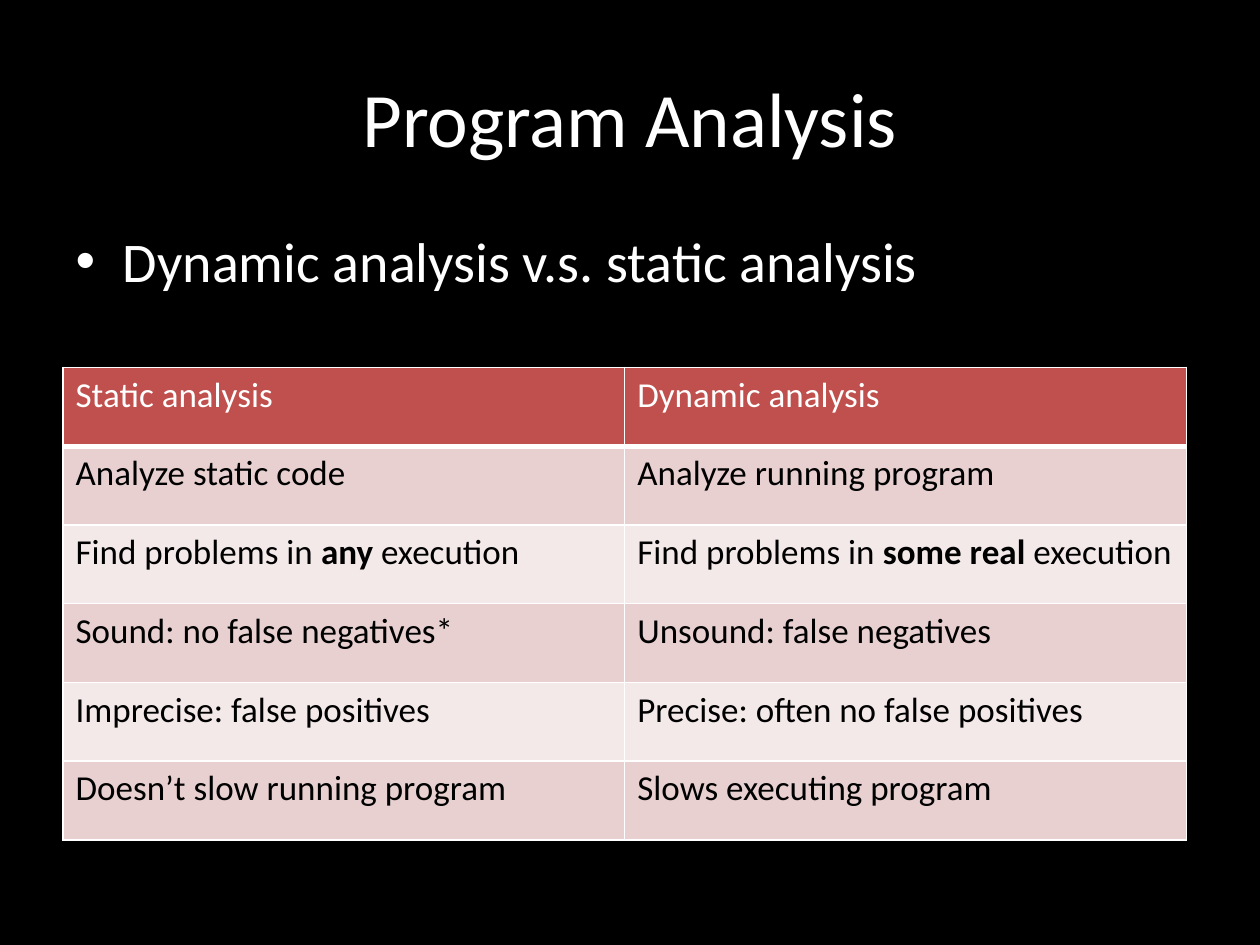
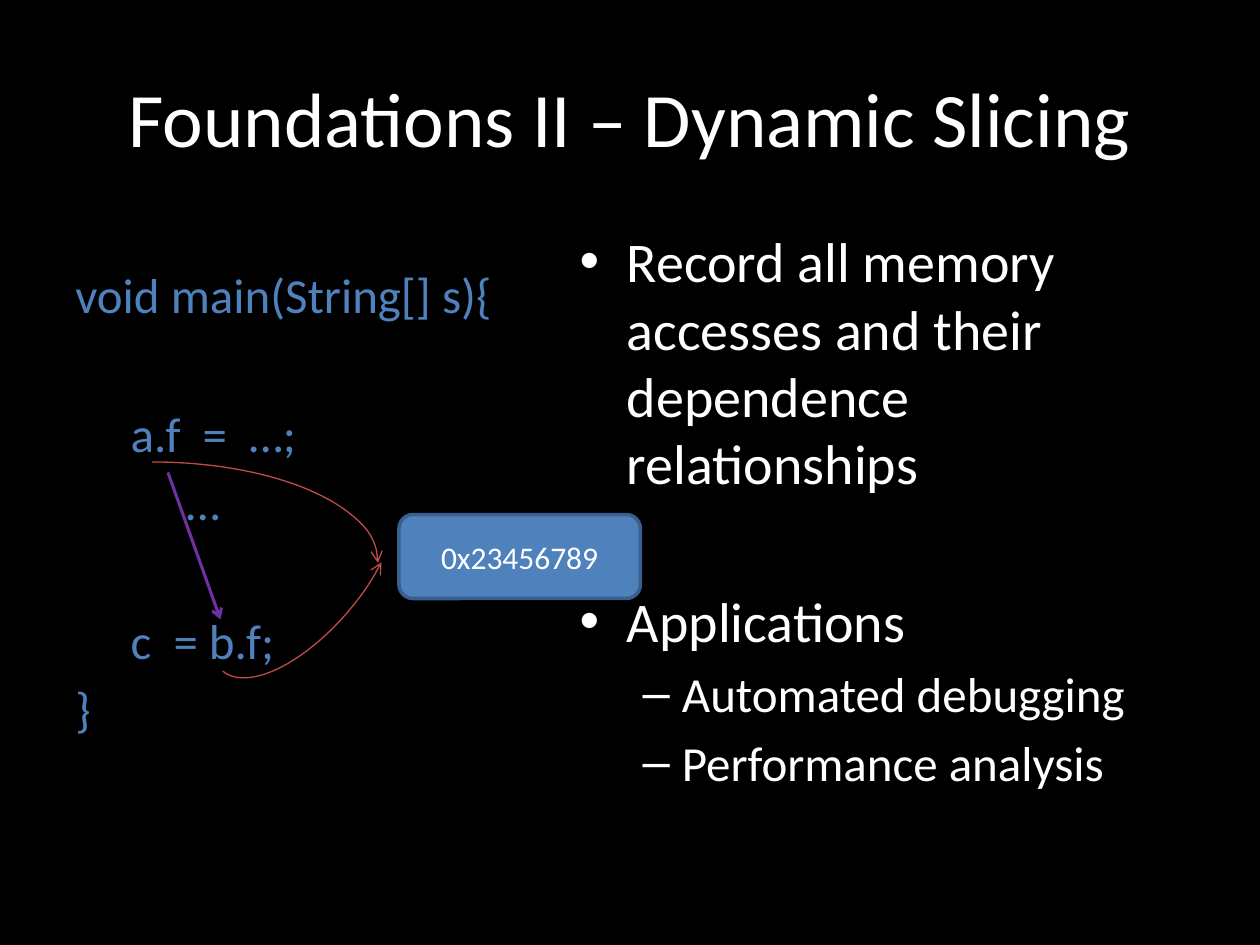
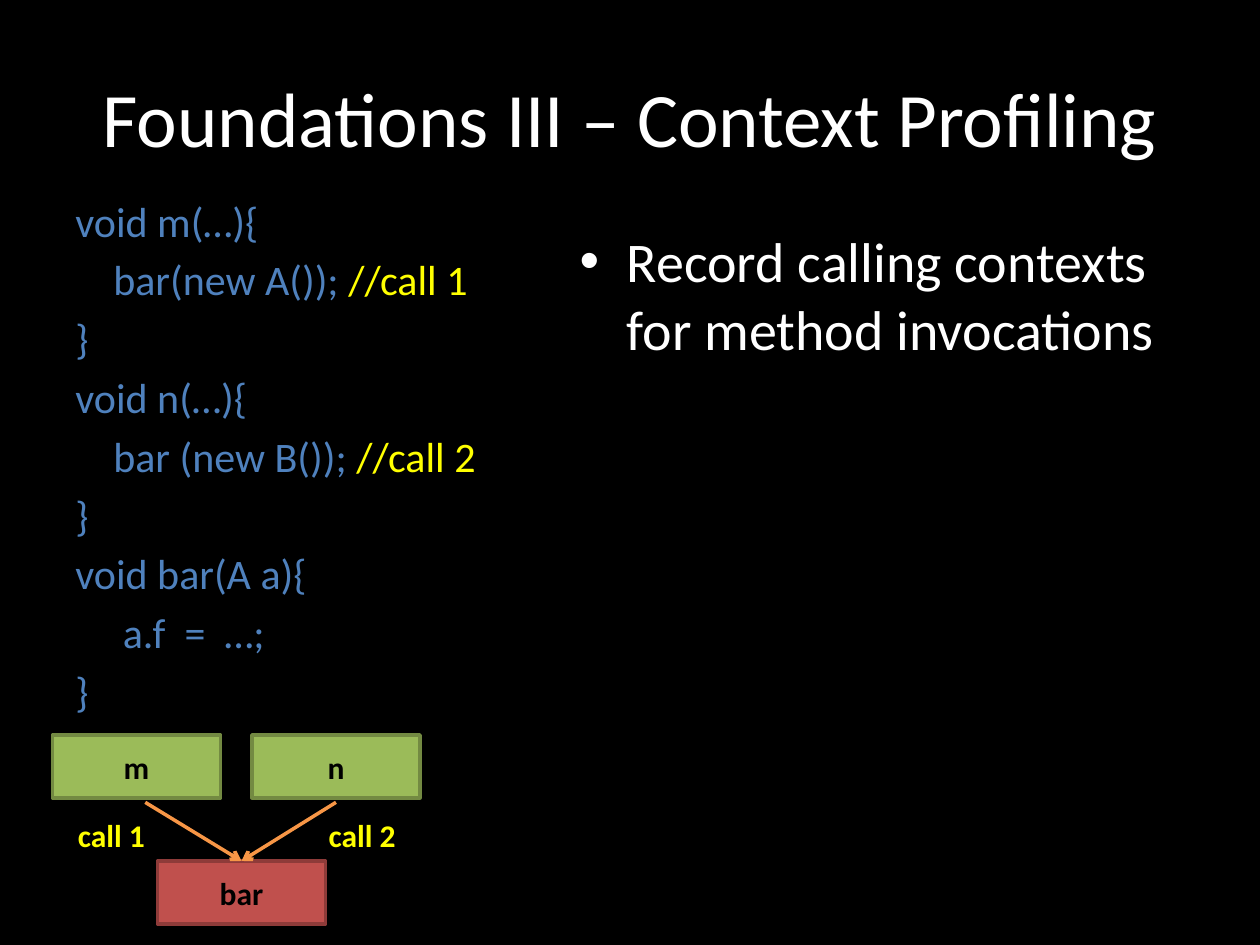
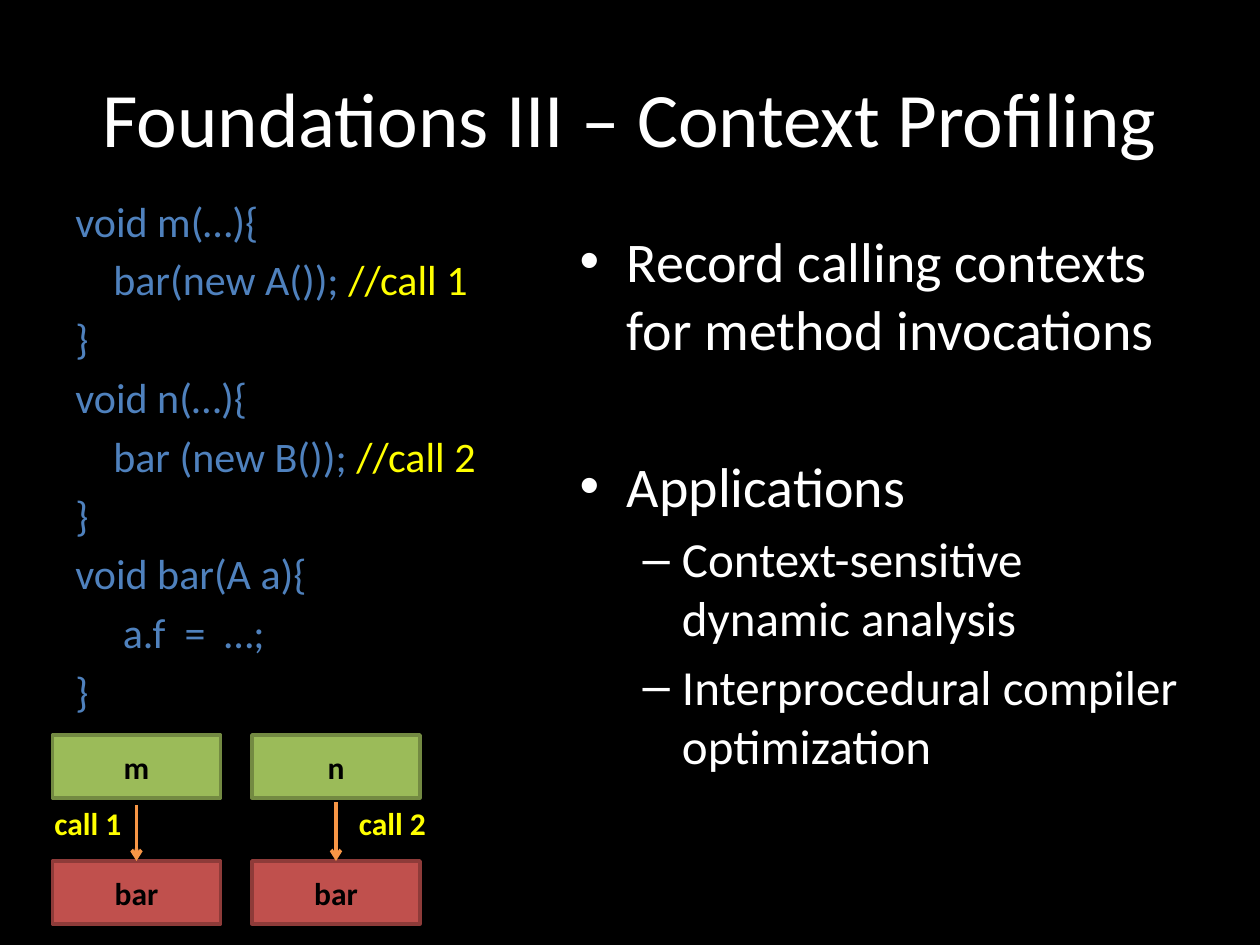
import pptx
import pptx.dml.color
import pptx.enum.shapes
import pptx.enum.text
import pptx.oxml
import pptx.oxml.ns
import pptx.util

Pt = pptx.util.Pt
Shapes = pptx.enum.shapes.MSO_SHAPE
Align = pptx.enum.text.PP_ALIGN
Anchor = pptx.enum.text.MSO_ANCHOR


class Theme:
    font = "Calibri"
    background, text, dark_text = "000000", "FFFFFF", "000000"
    blue, blue_edge = "4F81BD", "3A5F8C"
    green, green_edge = "9BBB59", "738A42"
    red, red_edge = "C0504D", "8E3B39"
    bands = ("E8D0D0", "F4E9E9")
    call, call_arrow = "FFFF00", "F79646"
    access_arc, dependence = "BF4C48", "7030A0"
    title_size, list_sizes = 44, (32, 28)
    table_size, label_size = 20, 18
    space_before, line_height, space_width = 0.2, 1.22, 0.226


# Content: list items are (text, level, gap before)
BOLD = {"bold": True}
CALL = {"color": Theme.call}
ANALYSIS_ITEMS = [("Dynamic analysis v.s. static analysis", 0, False)]
ANALYSIS_ROWS = [
    ("Static analysis", "Dynamic analysis"),
    ("Analyze static code", "Analyze running program"),
    ([("Find problems in ", {}), ("any", BOLD), (" execution", {})],
     [("Find problems in ", {}), ("some real ", BOLD), ("execution", {})]),
    ("Sound: no false negatives*", "Unsound: false negatives"),
    ("Imprecise: false positives", "Precise: often no false positives"),
    ("Doesn’t slow running program", "Slows executing program"),
]
SLICING_ITEMS = [
    ("Record all memory accesses and their dependence relationships", 0, False),
    ("Applications", 0, True),
    ("Automated debugging", 1, False),
    ("Performance analysis", 1, False),
]
PROFILING_ITEMS = [("Record calling contexts for method invocations", 0, False)]
PROFILING_APPLICATIONS = [
    ("Applications", 0, True),
    ("Context-sensitive dynamic analysis", 1, False),
    ("Interprocedural compiler optimization", 1, False),
]
# Code lines are (text, indent in characters, gap before)
SLICING_CODE = [
    ("void main(String[] s){", 0, True),
    ("a.f  =  …;", 5, True),
    ("…", 10, False),
    ("c  = b.f;", 5, True),
    ("}", 0, False),
]
PROFILING_CODE = [
    ("void m(…){", 0, False),
    ([("bar(new A()); ", {}), ("//call 1", CALL)], 4, False),
    ("}", 0, False),
    ("void n(…){", 0, False),
    ([("bar (new B()); ", {}), ("//call 2", CALL)], 4, False),
    ("}", 0, False),
    ("void bar(A a){", 0, False),
    ("a.f  =  …;", 5, False),
    ("}", 0, False),
]

# Geometry in points: left, top, width, height
TITLE_BOX = (36, 21.6, 648, 90)
WIDE_BODY = (36, 126, 648, 356.4)
RIGHT_BODY = (324, 126, 360, 356.4)
CODE_BOX = (36, 108, 288, 396)
TABLE_BOX = (36, 210, 642, 270)
NODE_SIZE = (96, 36)
LABEL_SIZE = (53.3, 28.8)
CALLER_TOP, CALLEE_TOP = 420, 492
M_LEFT, N_LEFT, SHARED_LEFT = 30, 144, 90


# Text helpers
def rgb(value):
    return pptx.dml.color.RGBColor.from_string(value)


def points(values):
    return [Pt(value) for value in values]


def write_text(paragraph, text, *, size, color=Theme.text, bold=False, align=None,
               level=0, indent=0, space_before=None):
    """Fill a paragraph from a string or a list of (text, overrides) parts."""
    if align is not None:
        paragraph.alignment = align
    if level:
        paragraph.level = level
    if indent:
        paragraph._p.get_or_add_pPr().set("marL", str(Pt(indent)))
    if space_before is not None:
        paragraph.space_before = Pt(space_before)
    for part, changes in [(text, {})] if isinstance(text, str) else text:
        run = paragraph.add_run()
        run.text = part
        run.font.name = Theme.font
        run.font.size = Pt(size)
        run.font.bold = changes.get("bold", bold)
        run.font.color.rgb = rgb(changes.get("color", color))


def next_paragraph(frame, index):
    return frame.add_paragraph() if index else frame.paragraphs[0]


def blank_gap(size):
    """Space before a paragraph that stands one empty line lower."""
    return round(size * (2 * Theme.space_before + Theme.line_height), 1)


# Slide parts
def place(shape, box):
    shape.left, shape.top, shape.width, shape.height = points(box)


def add_slide(presentation, title, items, body_box):
    slide = presentation.slides.add_slide(presentation.slide_layouts[1])
    heading, body = slide.shapes.title, slide.placeholders[1]
    place(heading, TITLE_BOX)
    place(body, body_box)
    write_text(heading.text_frame.paragraphs[0], title, size=Theme.title_size,
               align=Align.CENTER)
    body.text_frame.auto_size = pptx.enum.text.MSO_AUTO_SIZE.NONE
    for index, (text, level, gap) in enumerate(items):
        size = Theme.list_sizes[level]
        write_text(next_paragraph(body.text_frame, index), text, size=size, level=level,
                   space_before=blank_gap(size) if gap else None)
    return slide


def add_code(slide, lines, size):
    frame = slide.shapes.add_textbox(*points(CODE_BOX)).text_frame
    frame.word_wrap = True
    for index, (text, indent, gap) in enumerate(lines):
        before = blank_gap(size) if gap else size * Theme.space_before
        if index == 0:
            if gap:
                frame.margin_top = Pt(3.6 + before - size * Theme.space_before)
            before = 0
        write_text(next_paragraph(frame, index), text, size=size, color=Theme.blue,
                   indent=indent * size * Theme.space_width, space_before=before)


def set_line(shape, color, width, **ends):
    """Set the outline; ends maps headEnd or tailEnd to an arrow type."""
    shape.line.color.rgb = rgb(color)
    shape.line.width = Pt(width)
    properties = shape._element.spPr
    outline = properties.find(pptx.oxml.ns.qn("a:ln"))
    for end, kind in ends.items():
        outline.append(pptx.oxml.parse_xml(
            f'<a:{end} {pptx.oxml.ns.nsdecls("a")} type="{kind}"/>'))


def add_box(slide, kind, box, text, *, fill, edge, color, bold=False):
    shape = slide.shapes.add_shape(kind, *points(box))
    shape.shadow.inherit = False
    shape.fill.solid()
    shape.fill.fore_color.rgb = rgb(fill)
    set_line(shape, edge, 2)
    shape.text_frame.vertical_anchor = Anchor.MIDDLE
    write_text(shape.text_frame.paragraphs[0], text, size=Theme.label_size, color=color,
               bold=bold, align=Align.CENTER)
    return shape


def add_arc(slide, box, start, end, *, rotation=0, **ends):
    arc = slide.shapes.add_shape(Shapes.ARC, *points(box))
    arc.shadow.inherit = False
    arc.fill.background()
    arc.rotation = rotation
    arc.adjustments[0], arc.adjustments[1] = start, end
    set_line(arc, Theme.access_arc, 0.75, **ends)


def add_arrow(slide, start, end, color, width, target=None):
    arrow = slide.shapes.add_connector(pptx.enum.shapes.MSO_CONNECTOR.STRAIGHT,
                                       *points(start + end))
    if target is not None:
        arrow.end_connect(target, 0)
    set_line(arrow, color, width, tailEnd="arrow")
    arrow._element.spPr.append(pptx.oxml.parse_xml(
        f'<a:effectLst {pptx.oxml.ns.nsdecls("a")}/>'))


def set_borders(cell, widths):
    properties = cell._tc.get_or_add_tcPr()
    for side, width in zip("LRTB", widths):
        properties.append(pptx.oxml.parse_xml(
            f'<a:ln{side} {pptx.oxml.ns.nsdecls("a")} w="{Pt(width)}"><a:solidFill>'
            f'<a:srgbClr val="{Theme.text}"/></a:solidFill></a:ln{side}>'))


def add_analysis_table(slide):
    rows, columns = len(ANALYSIS_ROWS), len(ANALYSIS_ROWS[0])
    table = slide.shapes.add_table(rows, columns, *points(TABLE_BOX)).table
    table.first_row = table.horz_banding = False
    for row, texts in enumerate(ANALYSIS_ROWS):
        header = row == 0
        for column, text in enumerate(texts):
            cell = table.cell(row, column)
            set_borders(cell, (1, 1, 1, 3 if header else 1))
            cell.fill.solid()
            cell.fill.fore_color.rgb = rgb(Theme.red if header else Theme.bands[(row - 1) % 2])
            write_text(cell.text_frame.paragraphs[0], text, size=Theme.table_size,
                       color=Theme.text if header else Theme.dark_text)


def add_call_graph(slide, callee_lefts, calls, labels):
    """Draw m and n above their callees; calls are (start, callee index)."""
    def node(text, left, top, fill, edge):
        return add_box(slide, Shapes.RECTANGLE, (left, top) + NODE_SIZE, text,
                       fill=fill, edge=edge, color=Theme.dark_text, bold=True)

    node("m", M_LEFT, CALLER_TOP, Theme.green, Theme.green_edge)
    node("n", N_LEFT, CALLER_TOP, Theme.green, Theme.green_edge)
    callees = [node("bar", left, CALLEE_TOP, Theme.red, Theme.red_edge)
               for left in callee_lefts]
    for start, index in calls:
        end = (callee_lefts[index] + NODE_SIZE[0] / 2, CALLEE_TOP)
        add_arrow(slide, start, end, Theme.call_arrow, 2, callees[index])
    for number, position in enumerate(labels, 1):
        frame = slide.shapes.add_textbox(*points(position + LABEL_SIZE)).text_frame
        frame.word_wrap = False
        write_text(frame.paragraphs[0], f"call {number}", size=Theme.label_size,
                   color=Theme.call, bold=True)


# Slides
def build_slicing(presentation):
    slide = add_slide(presentation, "Foundations II – Dynamic Slicing",
                      SLICING_ITEMS, RIGHT_BODY)
    add_code(slide, SLICING_CODE, 28)
    add_arc(slide, (-42, 264, 258, 114), 162, 0.18, tailEnd="arrow")
    add_arc(slide, (101.5, 295.2, 145.4, 65.5), 132.78, 0, rotation=130.2, headEnd="arrow")
    add_box(slide, Shapes.ROUNDED_RECTANGLE, (228, 294, 138, 48), "0x23456789",
            fill=Theme.blue, edge=Theme.blue_edge, color=Theme.text)
    add_arrow(slide, (96, 270), (126, 354), Theme.dependence, 1.75)


def build_profiling(presentation, items, **graph):
    slide = add_slide(presentation, "Foundations III – Context Profiling", items, RIGHT_BODY)
    add_code(slide, PROFILING_CODE, 24)
    add_call_graph(slide, **graph)


def main():
    presentation = pptx.Presentation()
    presentation.slide_width, presentation.slide_height = Pt(720), Pt(540)
    background = presentation.slide_master.background.fill
    background.solid()
    background.fore_color.rgb = rgb(Theme.background)

    add_analysis_table(add_slide(presentation, "Program Analysis", ANALYSIS_ITEMS, WIDE_BODY))
    build_slicing(presentation)
    build_profiling(presentation, PROFILING_ITEMS,
                    callee_lefts=[SHARED_LEFT],
                    calls=[((83, 458.5), 0), ((192, 458.5), 0)],
                    labels=[(37.5, 463), (180.7, 463)])
    build_profiling(presentation, PROFILING_ITEMS + PROFILING_APPLICATIONS,
                    callee_lefts=[M_LEFT, N_LEFT],
                    calls=[((78, 460), 0), ((192, 458.5), 1)],
                    labels=[(24, 456), (198, 456)])
    presentation.save("out.pptx")


if __name__ == "__main__":
    main()
